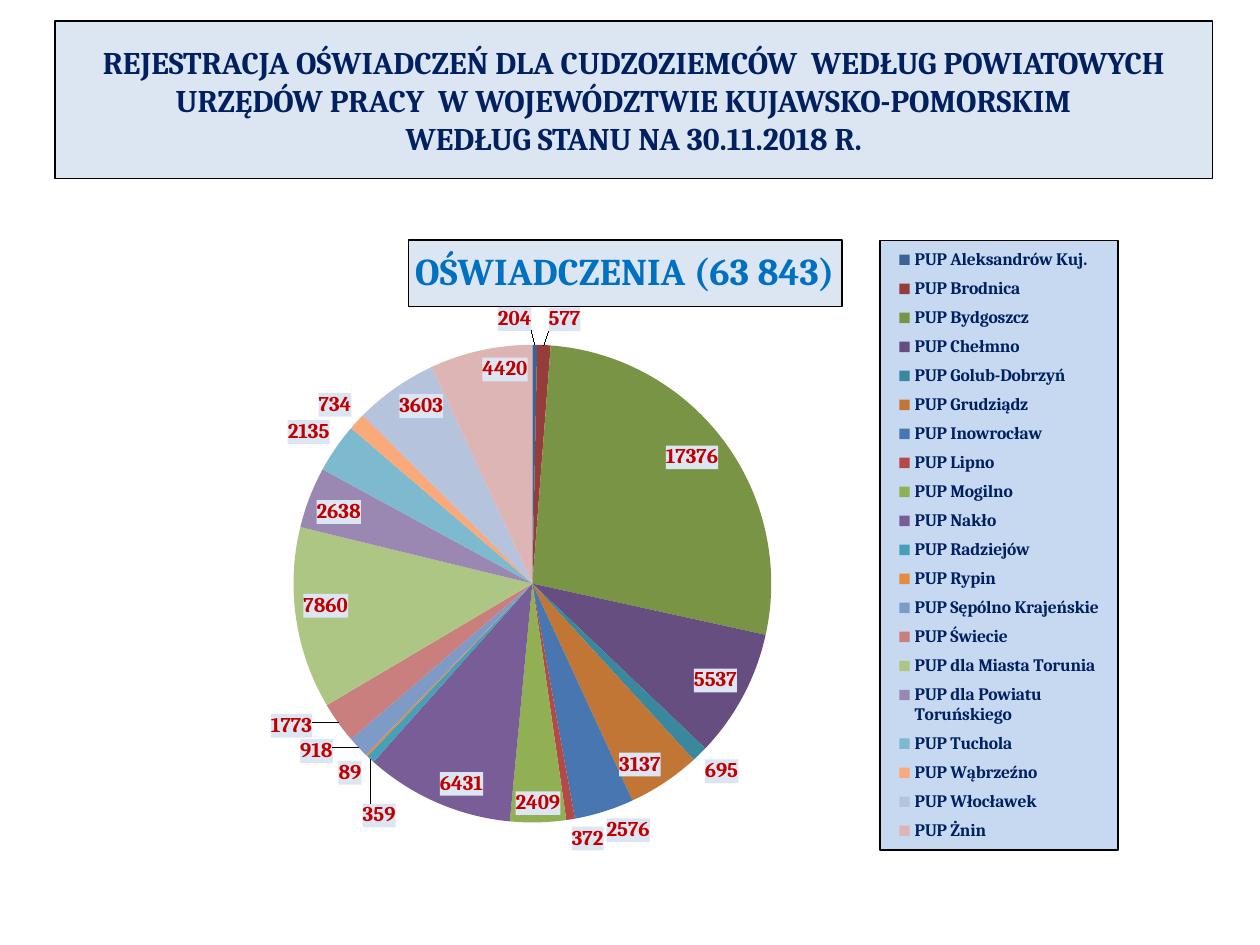
from lxml.etree import SubElement
from pptx import Presentation
from pptx.chart.data import CategoryChartData
from pptx.dml.color import RGBColor
from pptx.enum.chart import XL_CHART_TYPE, XL_LEGEND_POSITION
from pptx.enum.text import MSO_ANCHOR, PP_ALIGN
from pptx.oxml import parse_xml
from pptx.oxml.ns import nsdecls, qn
from pptx.util import Pt

# Content
TITLE = ("REJESTRACJA OŚWIADCZEŃ DLA CUDZOZIEMCÓW  WEDŁUG POWIATOWYCH "
         "URZĘDÓW PRACY  W WOJEWÓDZTWIE KUJAWSKO-POMORSKIM   \v"
         "WEDŁUG STANU NA 30.11.2018 R.")
CHART_TITLE = "OŚWIADCZENIA (63 843)"
# Office, declarations, slice colour
OFFICES = [
    ("PUP Aleksandrów Kuj.", 204, "3B6495"),
    ("PUP Brodnica", 577, "963D3B"),
    ("PUP Bydgoszcz", 17376, "7A9445"),
    ("PUP Chełmno", 5537, "664E80"),
    ("PUP Golub-Dobrzyń", 695, "3A889D"),
    ("PUP Grudziądz", 3137, "C17636"),
    ("PUP Inowrocław", 2576, "4876B0"),
    ("PUP Lipno", 372, "B34A47"),
    ("PUP Mogilno", 2409, "91AF53"),
    ("PUP Nakło", 6431, "785D97"),
    ("PUP Radziejów", 359, "46A0BA"),
    ("PUP Rypin", 89, "E58C41"),
    ("PUP Sępólno Krajeńskie", 918, "7E9BC8"),
    ("PUP Świecie", 1773, "C97F7D"),
    ("PUP dla Miasta Torunia", 7860, "AEC683"),
    ("PUP dla Powiatu Toruńskiego", 2638, "9A88B3"),
    ("PUP Tuchola", 2135, "7DB9CF"),
    ("PUP Wąbrzeźno", 734, "F9A97A"),
    ("PUP Włocławek", 3603, "B5C3DC"),
    ("PUP Żnin", 4420, "DDB5B4"),
]
OUTSIDE_LABELS = {204, 577, 695, 2576, 372, 359, 89, 918, 1773, 2135, 734}
# Label shifts as fractions of the chart size
LABEL_SHIFTS = {204: (-0.02, -0.01), 577: (0.02, -0.01), 359: (0.03, 0.06),
                918: (-0.02, -0.02), 1773: (-0.02, -0.02)}

THEME = {
    "font": "Cambria", "navy": "002060", "blue": "0070C0", "red": "C00000",
    "pale": "DCE6F2", "legend": "C6D9F1", "line": "000000",
    "title": 18, "chart_title": 21.6, "label": 12, "legend_size": 10,
}


def style_font(font, size, color):
    font.name, font.size, font.bold = THEME["font"], Pt(size), True
    font.color.rgb = RGBColor.from_string(color)


def style_box(fill, line, color):
    fill.solid()
    fill.fore_color.rgb = RGBColor.from_string(color)
    line.color.rgb = RGBColor.from_string(THEME["line"])
    line.width = Pt(0.75)


def box_properties(fill, line=None):
    outline = (f'<a:ln w="9525"><a:solidFill><a:srgbClr val="{line}"/></a:solidFill></a:ln>'
               if line else "")
    return parse_xml(f'<c:spPr {nsdecls("c", "a")}><a:solidFill><a:srgbClr val="{fill}"/>'
                     f'</a:solidFill>{outline}</c:spPr>')


def manual_layout(target=None, **values):
    parts = f'<c:layoutTarget val="{target}"/>' if target else ""
    parts += "".join(f'<c:{name} val="{value}"/>' for name, value in values.items())
    return parse_xml(f'<c:layout {nsdecls("c")}><c:manualLayout>{parts}'
                     '</c:manualLayout></c:layout>')


def set_layout(element, layout, predecessor=None):
    for old in element.findall(qn("c:layout")):
        element.remove(old)
    if predecessor is None:
        element.insert(0, layout)
    else:
        element.find(qn(predecessor)).addnext(layout)


def place_label(point, value):
    """Give one slice label its font, fill, side and shift."""
    label = point.data_label
    style_font(label.font, THEME["label"], THEME["red"])
    element = label._dLbl
    element.find(qn("c:txPr")).addprevious(box_properties(THEME["pale"]))
    if value in LABEL_SHIFTS:
        x, y = LABEL_SHIFTS[value]
        set_layout(element, manual_layout(x=x, y=y), "c:idx")
    position = parse_xml(f'<c:dLblPos {nsdecls("c")} '
                         f'val="{"outEnd" if value in OUTSIDE_LABELS else "inEnd"}"/>')
    element.find(qn("c:txPr")).addnext(position)


presentation = Presentation()
presentation.slide_width, presentation.slide_height = Pt(720), Pt(540)
slide = presentation.slides.add_slide(presentation.slide_layouts[5])

# Slide title
title = slide.shapes.title
title.left, title.top, title.width, title.height = Pt(31.5), Pt(12), Pt(661.5), Pt(90)
style_box(title.fill, title.line, THEME["pale"])
title.text_frame.text = TITLE
title.text_frame.vertical_anchor = MSO_ANCHOR.MIDDLE
paragraph = title.text_frame.paragraphs[0]
paragraph.alignment = PP_ALIGN.CENTER
style_font(paragraph.font, THEME["title"], THEME["navy"])

# Pie chart
data = CategoryChartData()
data.categories = [name for name, _, _ in OFFICES]
data.add_series("Series 1", [value for _, value, _ in OFFICES])
chart = slide.shapes.add_chart(XL_CHART_TYPE.PIE, Pt(67.5), Pt(126), Pt(576), Pt(372),
                               data).chart
chart.font.name, chart.font.size = "Calibri", Pt(18)
plot = chart.plots[0]
plot.vary_by_categories = True
set_layout(chart._chartSpace.chart.plotArea,
           manual_layout("inner", xMode="edge", yMode="edge", x=0.174, y=0.191, w=0.474, h=0.734))

# Chart title
chart.has_title = True
chart.chart_title.text_frame.text = CHART_TITLE
style_font(chart.chart_title.text_frame.paragraphs[0].font, THEME["chart_title"], THEME["blue"])
title_element = chart.chart_title._element
set_layout(title_element, manual_layout(xMode="edge", yMode="edge", x=0.288, y=0.03), "c:tx")
chart.chart_title.include_in_layout = False if hasattr(chart.chart_title, "include_in_layout") else None
style_box(chart.chart_title.format.fill, chart.chart_title.format.line, THEME["pale"])

# Slices and labels
series = plot.series[0]
for index, (_, value, color) in enumerate(OFFICES):
    point = series.points[index]
    point.format.fill.solid()
    point.format.fill.fore_color.rgb = RGBColor.from_string(color)
    place_label(point, value)
labels = series.data_labels
labels.show_value = True
leader = labels._element.find(qn("c:showLeaderLines"))
if leader is None:
    leader = SubElement(labels._element, qn("c:showLeaderLines"))
leader.set("val", "1")

# Legend
chart.has_legend = True
legend = chart.legend
legend.position = XL_LEGEND_POSITION.RIGHT
legend.include_in_layout = False
style_font(legend.font, THEME["legend_size"], THEME["navy"])
set_layout(legend._element, manual_layout(xMode="edge", yMode="edge", x=0.756, y=0.031,
                                          w=0.236, h=0.936), "c:legendPos")
legend._element.find(qn("c:txPr")).addprevious(box_properties(THEME["legend"], THEME["line"]))

presentation.save("out.pptx")
